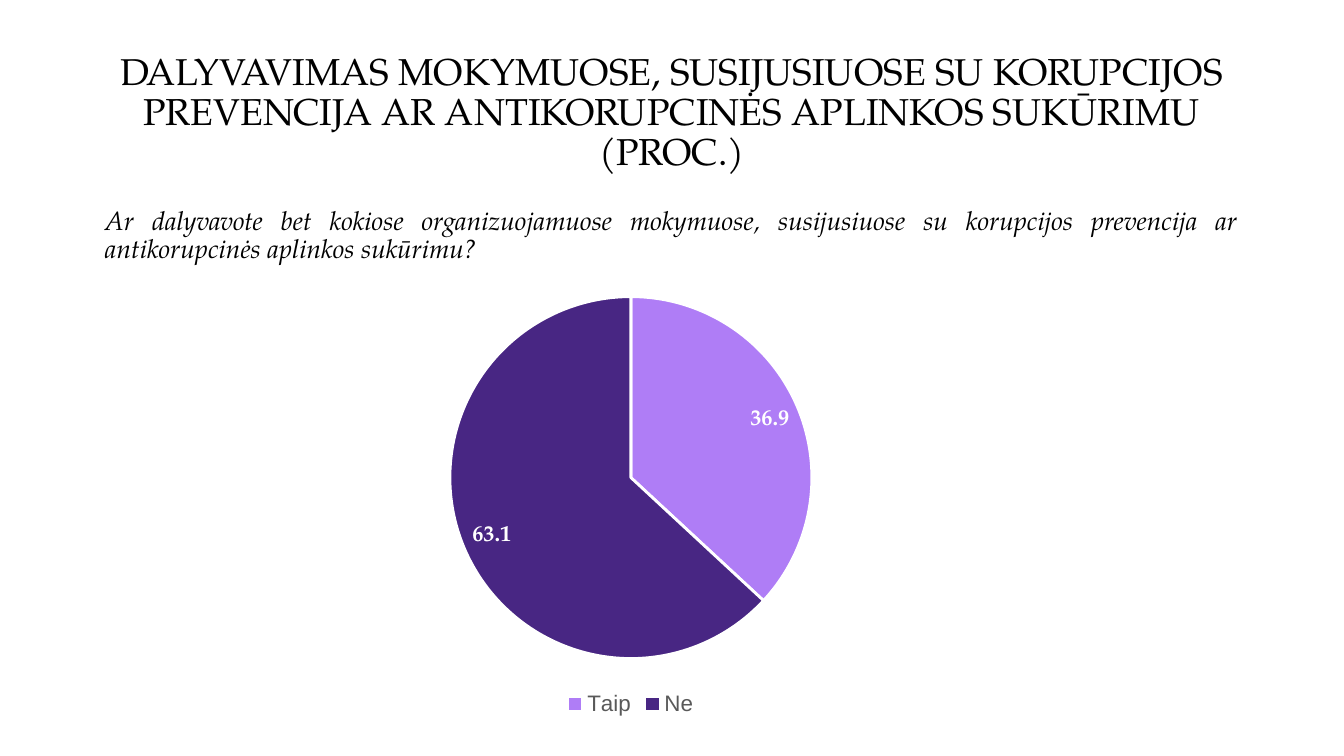
import pptx
import pptx.chart.data
import pptx.dml.color
import pptx.enum.chart
import pptx.enum.text
import pptx.util

Pt = pptx.util.Pt
ALIGN = pptx.enum.text.PP_ALIGN
ANCHOR = pptx.enum.text.MSO_ANCHOR

SERIF = "TeX Gyre Pagella"
SANS = "Arial"
COLORS = {
    "text": "000000",
    "legend": "595959",
    "white": "FFFFFF",
    "Taip": "AF7DF6",
    "Ne": "482683",
}
ANSWERS = {"Taip": 36.9, "Ne": 63.1}
TITLE = (
    "DALYVAVIMAS MOKYMUOSE, SUSIJUSIUOSE SU KORUPCIJOS PREVENCIJA "
    "AR ANTIKORUPCINĖS APLINKOS SUKŪRIMU (PROC.)"
)
QUESTION = (
    "Ar dalyvavote bet kokiose organizuojamuose mokymuose, susijusiuose su "
    "korupcijos prevencija ar antikorupcinės aplinkos sukūrimu?"
)


def rgb(name):
    return pptx.dml.color.RGBColor.from_string(COLORS[name])


def style_font(font, family, size, color, bold=False, italic=False):
    font.name = family
    font.size = Pt(size)
    font.color.rgb = rgb(color)
    font.bold = bold
    font.italic = italic


def add_text(slide, box, wording, size, align, anchor, italic=False):
    frame = slide.shapes.add_textbox(*map(Pt, box)).text_frame
    frame.word_wrap = True
    frame.vertical_anchor = anchor
    frame.margin_left = frame.margin_right = Pt(6.75)
    frame.margin_top = frame.margin_bottom = Pt(3.4)
    paragraph = frame.paragraphs[0]
    paragraph.text = wording
    paragraph.alignment = align
    paragraph.line_spacing = 0.9
    style_font(paragraph.font, SERIF, size, "text", italic=italic)


def add_answer_pie(slide, box):
    data = pptx.chart.data.CategoryChartData(number_format="0.0")
    data.categories = list(ANSWERS)
    data.add_series("Series 1", list(ANSWERS.values()))
    chart = slide.shapes.add_chart(
        pptx.enum.chart.XL_CHART_TYPE.PIE, *map(Pt, box), data
    ).chart
    chart.has_title = False
    style_font(chart.font, SANS, 10, "text")

    chart.has_legend = True
    chart.legend.position = pptx.enum.chart.XL_LEGEND_POSITION.BOTTOM
    chart.legend.include_in_layout = False
    style_font(chart.legend.font, SANS, 12, "legend")

    plot = chart.plots[0]
    plot.vary_by_categories = True
    for index, answer in enumerate(ANSWERS):
        slice_format = plot.series[0].points[index].format
        slice_format.fill.solid()
        slice_format.fill.fore_color.rgb = rgb(answer)
        slice_format.line.color.rgb = rgb("white")
        slice_format.line.width = Pt(1.5)

    labels = plot.series[0].data_labels
    labels.show_value = True
    labels.show_percentage = False
    labels.number_format = "0.0"
    labels.number_format_is_linked = False
    labels.position = pptx.enum.chart.XL_LABEL_POSITION.INSIDE_END
    style_font(labels.font, SERIF, 12, "white", bold=True)


def main():
    deck = pptx.Presentation()
    deck.slide_width, deck.slide_height = Pt(720), Pt(405)
    slide = deck.slides.add_slide(deck.slide_layouts[6])
    left, width = 49.5, 621
    add_text(slide, (left, 21.5, width, 78.5), TITLE, 20, ALIGN.CENTER, ANCHOR.MIDDLE)
    add_text(slide, (left, 108, width, 257), QUESTION, 14, ALIGN.JUSTIFY, ANCHOR.TOP,
             italic=True)
    add_answer_pie(slide, (98, 149, 480, 237.5))
    deck.save("out.pptx")


if __name__ == "__main__":
    main()
